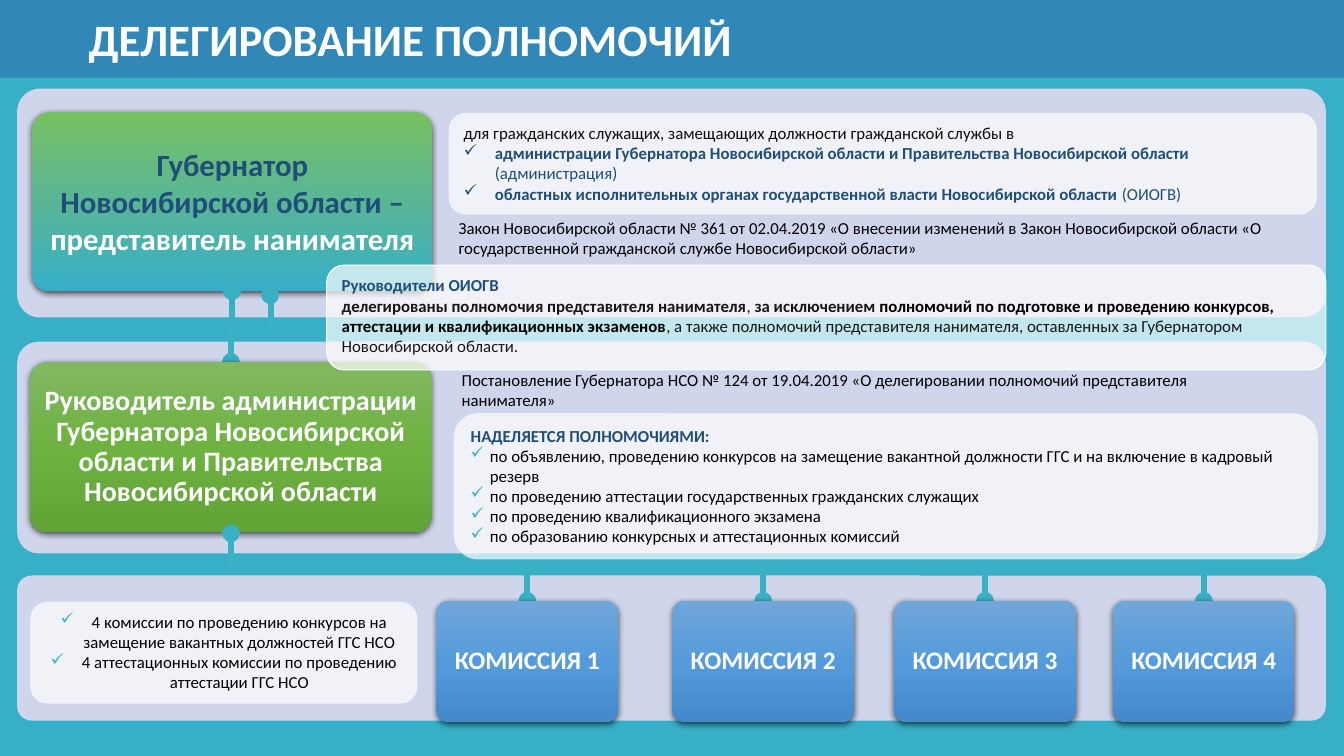
from lxml.etree import SubElement
from pptx import Presentation
from pptx.dml.color import RGBColor
from pptx.enum.shapes import MSO_CONNECTOR, MSO_SHAPE
from pptx.enum.text import MSO_ANCHOR, MSO_AUTO_SIZE, PP_ALIGN
from pptx.oxml.ns import qn
from pptx.util import Inches, Pt

COLORS = {
    "background": "37AFC7", "band": "CFD5EA", "title": "3078B3",
    "line": "39B0C4", "white": "FFFFFF", "black": "000000",
    "navy": "1F4E79", "ink": "0D0D0D", "dark": "181717",
}
GRADIENTS = {
    "governor": ("76C062", "59B695", "36AFC9"),
    "head": ("81B861", "6FB242", "62A336"),
    "commission": ("71A6DB", "559BDB", "448ACA"),
}
COMMISSION_LEFTS = (4.33, 6.67, 8.87, 11.04)
COMMISSION_TOP = 5.96
COMMISSION_WIDTH = 1.8
HEAD_X, HEAD_BOTTOM = 2.29, 5.29
CENTER = {"alignment": PP_ALIGN.CENTER}


def color(name):
    return RGBColor.from_string(COLORS[name])


def apply_format(target, values):
    for name, value in values.items():
        setattr(target, name, value)


def add_node(parent, tag, **attributes):
    return SubElement(parent, qn(tag), {key: str(value) for key, value in attributes.items()})


def set_indent(para, left, hanging=0, bullet=None):
    properties = para._p.get_or_add_pPr()
    properties.set("marL", str(Inches(left)))
    properties.set("indent", str(-Inches(hanging)))
    if hanging:
        if bullet:
            add_node(add_node(properties, "a:buClr"), "a:srgbClr", val=COLORS[bullet])
        add_node(properties, "a:buChar", char="✓")


def write(box, paragraphs, size=12, inset=None, anchor=MSO_ANCHOR.TOP, grow=False):
    frame = box.text_frame
    apply_format(frame, {"word_wrap": True, "vertical_anchor": anchor})
    if grow:
        frame.auto_size = MSO_AUTO_SIZE.SHAPE_TO_FIT_TEXT
    if inset is not None:
        sides = ("margin_left", "margin_top", "margin_right", "margin_bottom")
        apply_format(frame, dict.fromkeys(sides, Inches(inset)))
    for index, (spans, indent, values) in enumerate(paragraphs):
        para = frame.add_paragraph() if index else frame.paragraphs[0]
        if indent:
            set_indent(para, *indent)
        apply_format(para, {"alignment": PP_ALIGN.LEFT, **values})
        for text, tint, bold in spans:
            span = para.add_run()
            span.text = text
            apply_format(span.font, {"name": "Calibri", "size": Pt(size), "bold": bold})
            span.font.color.rgb = color(tint)


def add_panel(page, place, fill, opacity=100, kind=MSO_SHAPE.ROUNDED_RECTANGLE, radius=None):
    panel = page.shapes.add_shape(kind, *map(Inches, place))
    panel.shadow.inherit = False
    panel.line.fill.background()
    panel.fill.solid()
    panel.fill.fore_color.rgb = color(fill)
    if radius:
        panel.adjustments[0] = radius
    if opacity < 100:
        tint = panel.element.spPr.find(qn("a:solidFill"))[0]
        add_node(tint, "a:alpha", val=opacity * 1000)
    return panel


def add_card(page, place, gradient, paragraphs, size, inset):
    card = add_panel(page, place, "white", radius=0.1)
    properties = card.element.spPr
    solid = properties.find(qn("a:solidFill"))
    fill = add_node(properties, "a:gradFill", rotWithShape=1)
    properties.replace(solid, fill)
    stops = add_node(fill, "a:gsLst")
    for index, tint in enumerate(GRADIENTS[gradient]):
        add_node(add_node(stops, "a:gs", pos=index * 50000), "a:srgbClr", val=tint)
    add_node(fill, "a:lin", ang=5400000, scaled=0)
    shadow = add_node(properties.find(qn("a:effectLst")), "a:outerShdw", blurRad=Pt(4.5),
                      dist=Pt(1.5), dir=5400000, algn="ctr", rotWithShape=0)
    add_node(add_node(shadow, "a:srgbClr", val=COLORS["black"]), "a:alpha", val=63000)
    write(card, paragraphs, size, inset, MSO_ANCHOR.MIDDLE)


def add_note(page, place, paragraphs):
    note = add_panel(page, place, "white", 70)
    write(note, paragraphs, grow=True)
    return note


def add_caption(page, place, text, indent=None):
    box = page.shapes.add_textbox(*map(Inches, place))
    write(box, [([(text, "black", False)], indent, {})], grow=True)


def style_link(link, ends):
    link.line.color.rgb = color("line")
    link.line.width = Pt(4.25)
    outline = link.element.spPr.find(qn("a:ln"))
    for end in ends:
        add_node(outline, f"a:{end}End", type="oval")


def add_link(page, start, finish, ends):
    middle = (start[1] + finish[1]) / 2
    corners = [(start[0], middle), (finish[0], middle), finish]
    builder = page.shapes.build_freeform(*map(Inches, start))
    builder.add_line_segments([tuple(map(Inches, point)) for point in corners], close=False)
    link = builder.convert_to_shape()
    link.shadow.inherit = False
    link.fill.background()
    style_link(link, ends)


def add_elbow(page, start, finish):
    elbow = page.shapes.add_connector(MSO_CONNECTOR.ELBOW, *map(Inches, start + finish))
    geometry = elbow.element.spPr.find(qn("a:prstGeom"))
    guides = geometry.find(qn("a:avLst"))
    add_node(guides, "a:gd", name="adj1", fmla="val 1500")
    style_link(elbow, ("head", "tail"))
    add_node(elbow.element.spPr, "a:effectLst")


def add_commissions(page):
    for number, left in enumerate(COMMISSION_LEFTS, 1):
        ends = ("head", "tail") if number == len(COMMISSION_LEFTS) else ("tail",)
        add_link(page, (HEAD_X, HEAD_BOTTOM), (left + COMMISSION_WIDTH / 2, COMMISSION_TOP), ends)
        label = [(f"КОМИССИЯ {number}", "white", True)]
        add_card(page, (left, COMMISSION_TOP, COMMISSION_WIDTH, 1.2), "commission",
                 [(label, None, {**CENTER, "line_spacing": 0.9, "space_after": Pt(6.3)})], 18, 0.07)


def main():
    deck = Presentation()
    apply_format(deck, {"slide_width": Inches(13.33), "slide_height": Inches(7.5)})
    page = deck.slides.add_slide(deck.slide_layouts[6])
    page.background.fill.solid()
    page.background.fill.fore_color.rgb = color("background")

    for top, height in ((5.71, 1.44), (3.39, 2.1), (0.88, 2.27)):
        add_panel(page, (0.17, top, 12.98, height), "band", radius=0.1)

    add_card(page, (0.32, 1.11, 3.97, 1.78), "governor", [
        ([("Губернатор", "navy", True)], None, CENTER),
        ([("Новосибирской области –", "navy", True)], None, CENTER),
        ([("представитель нанимателя", "white", True)], None, CENTER),
    ], 22, 0.09)
    add_link(page, (2.3, 2.89), (HEAD_X, 3.59), ("head", "tail"))
    head = "Руководитель администрации Губернатора Новосибирской области и Правительства Новосибирской области"
    add_card(page, (0.3, 3.59, 3.98, 1.69), "head", [
        ([(head, "white", True)], None, {**CENTER, "line_spacing": 0.9, "space_after": Pt(7)}),
    ], 20, 0.08)
    add_commissions(page)

    title = add_panel(page, (0, 0, 13.33, 0.77), "title", 72, MSO_SHAPE.RECTANGLE)
    write(title, [([("ДЕЛЕГИРОВАНИЕ ПОЛНОМОЧИЙ", "white", True)], (0.78,), {})], 32,
          anchor=MSO_ANCHOR.MIDDLE)

    add_caption(page, (4.45, 2.11, 8.42, 0.5),
                "Закон Новосибирской области № 361 от 02.04.2019 «О внесении изменений в Закон "
                "Новосибирской области «О государственной гражданской службе Новосибирской области»")
    add_note(page, (4.45, 1.12, 8.61, 1.01), [
        ([("для гражданских служащих, замещающих должности гражданской службы в", "ink", False)], None, {}),
        ([("администрации Губернатора Новосибирской области и Правительства Новосибирской области ", "navy", True),
          ("(администрация)", "navy", False)], (0.31, 0.31), {}),
        ([("областных исполнительных органах государственной власти Новосибирской области ", "navy", True),
          ("(ОИОГВ)", "navy", False)], (0.31, 0.31), {}),
    ])
    add_caption(page, (4.28, 3.62, 8.46, 0.5),
                "Постановление Губернатора НСО № 124 от 19.04.2019 «О делегировании полномочий "
                "представителя нанимателя»", (0.2,))
    powers = (
        "по объявлению, проведению конкурсов на замещение вакантной должности ГГС и на включение в кадровый резерв",
        "по проведению аттестации государственных гражданских служащих",
        "по проведению квалификационного экзамена",
        "по образованию конкурсных и аттестационных комиссий",
    )
    add_note(page, (4.5, 4.1, 8.57, 1.45), [
        ([("НАДЕЛЯЕТСЯ ПОЛНОМОЧИЯМИ:", "navy", True)], None, {}),
        *[([(power, "black", False)], (0.19, 0.19, "background"), {}) for power in powers],
    ])
    counts = (
        "4 комиссии по проведению конкурсов на замещение вакантных должностей ГГС НСО",
        "4 аттестационных комиссии по проведению аттестации ГГС НСО",
    )
    add_note(page, (0.3, 5.97, 3.84, 1.01),
             [([(count, "black", False)], (0.31, 0.31, "line"), CENTER) for count in counts])
    add_elbow(page, (2.68, 2.93), (3.24, 3.3))
    delegation = add_note(page, (3.24, 2.63, 9.91, 1.04), [
        ([("Руководители ОИОГВ", "navy", True)], None, {}),
        ([("делегированы полномочия представителя нанимателя", "dark", True), (", ", "dark", False),
          ("за исключением ", "dark", True),
          ("полномочий по подготовке и проведению конкурсов, аттестации и квалификационных экзаменов", "black", True),
          (", а также полномочий представителя нанимателя, оставленных за Губернатором Новосибирской области.",
           "dark", False)], None, {}),
    ])
    delegation.line.color.rgb = color("white")
    delegation.line.width = Pt(0.75)
    deck.save("out.pptx")


if __name__ == "__main__":
    main()
